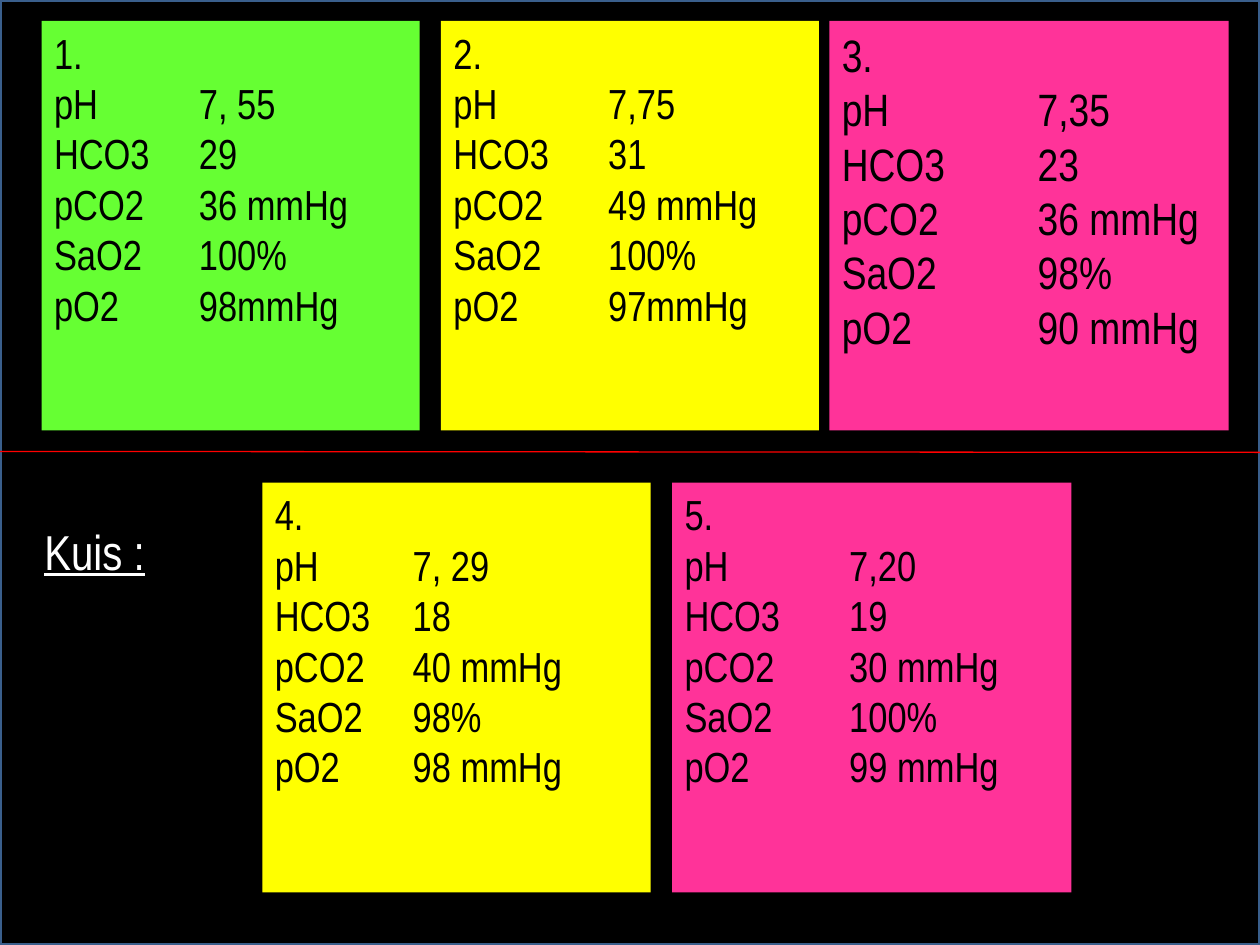
from dataclasses import dataclass

import pptx
import pptx.util
import pptx.dml.color
import pptx.enum.shapes
import pptx.enum.text
import pptx.oxml
import pptx.oxml.ns

Cm = pptx.util.Cm
Pt = pptx.util.Pt
RGBColor = pptx.dml.color.RGBColor

BLACK = RGBColor(0x00, 0x00, 0x00)
WHITE = RGBColor(0xFF, 0xFF, 0xFF)
GREEN = RGBColor(0x66, 0xFF, 0x33)
YELLOW = RGBColor(0xFF, 0xFF, 0x00)
PINK = RGBColor(0xFF, 0x33, 0x99)
RED = RGBColor(0xFF, 0x00, 0x00)
BLUE = RGBColor(0x3A, 0x5F, 0x8C)

WIDTH, HEIGHT = Cm(25.4), Cm(19.05)
TOP, LOWER, TALL = 0.42, 9.73, 8.26
FACE = "Arial Narrow"
LABELS = ("pH", "HCO3", "pCO2", "SaO2", "pO2")


@dataclass
class Card:
    left: float
    top: float
    width: float
    fill: RGBColor
    tab: float
    values: tuple[str, ...]
    size: float = 24


CARDS = (
    Card(0.84, TOP, 7.62, GREEN, 2.92, ("7, 55", "29", "36 mmHg", "100%", "98mmHg")),
    Card(8.89, TOP, 7.62, YELLOW, 3.12, ("7,75", "31", "49 mmHg", "100%", "97mmHg")),
    Card(16.72, TOP, 8.05, PINK, 3.95, ("7,35", "23", "36 mmHg", "98%", "90 mmHg"), 25.9),
    Card(5.29, LOWER, 7.83, YELLOW, 2.78, ("7, 29", "18", "40 mmHg", "98%", "98 mmHg")),
    Card(13.55, LOWER, 8.05, PINK, 3.32, ("7,20", "19", "30 mmHg", "100%", "99 mmHg")),
)


def style(thing: object, form: dict) -> None:
    for name, value in form.items():
        setattr(thing, name, value)


def set_font(font: object, size: float, color: RGBColor, line: bool = False) -> None:
    style(font, {"name": FACE, "size": Pt(size), "underline": line})
    font.color.rgb = color


def add_rect(slide: object, box: tuple, fill: RGBColor) -> object:
    rect = slide.shapes.add_shape(pptx.enum.shapes.MSO_SHAPE.RECTANGLE, *box)
    rect.shadow.inherit = False
    rect.fill.solid()
    rect.fill.fore_color.rgb = fill
    rect.line.fill.background()
    return rect


def set_tab(para: object, pos: float) -> None:
    props = para._p.get_or_add_pPr()
    tabs = pptx.oxml.parse_xml(
        f'<a:tabLst {pptx.oxml.ns.nsdecls("a")}><a:tab pos="{Cm(pos)}" algn="l"/></a:tabLst>'
    )
    props.append(tabs)


def add_card(slide: object, card: Card, count: int) -> None:
    box = (Cm(card.left), Cm(card.top), Cm(card.width), Cm(TALL))
    frame = add_rect(slide, box, card.fill).text_frame
    style(frame, {"word_wrap": True, "vertical_anchor": pptx.enum.text.MSO_ANCHOR.TOP})
    rows = [f"{label}\t{value}" for label, value in zip(LABELS, card.values)]
    frame.text = "\n".join([f"{count}.", *rows])
    for para in frame.paragraphs:
        para.alignment = pptx.enum.text.PP_ALIGN.LEFT
        set_tab(para, card.tab)
        set_font(para.runs[0].font, card.size, BLACK)


def add_rule(slide: object) -> None:
    rule = slide.shapes.add_connector(
        pptx.enum.shapes.MSO_CONNECTOR.STRAIGHT, 0, Cm(9.1), WIDTH, Cm(9.12)
    )
    rule.line.color.rgb = RED
    rule.line.width = Pt(0.75)
    rule._element.spPr.append(
        pptx.oxml.parse_xml(f'<a:effectLst {pptx.oxml.ns.nsdecls("a")}/>')
    )


def set_title(slide: object) -> None:
    title = slide.shapes.title
    style(title, {"left": Cm(0.64), "top": Cm(9.95), "width": Cm(8.68), "height": Cm(2.33)})
    frame = title.text_frame
    frame.text = "Kuis :"
    style(frame, {
        "word_wrap": True,
        "auto_size": pptx.enum.text.MSO_AUTO_SIZE.NONE,
        "vertical_anchor": pptx.enum.text.MSO_ANCHOR.MIDDLE,
    })
    para = frame.paragraphs[0]
    para.alignment = pptx.enum.text.PP_ALIGN.LEFT
    set_font(para.runs[0].font, 28, WHITE, True)
    slide.shapes.element.append(title.element)


def main() -> None:
    deck = pptx.Presentation()
    style(deck, {"slide_width": WIDTH, "slide_height": HEIGHT})
    slide = deck.slides.add_slide(deck.slide_layouts[5])
    back = add_rect(slide, (0, 0, WIDTH, HEIGHT), BLACK)
    back.line.color.rgb = BLUE
    back.line.width = Pt(2)
    for count, card in enumerate(CARDS, 1):
        add_card(slide, card, count)
    add_rule(slide)
    set_title(slide)
    deck.save("out.pptx")


if __name__ == "__main__":
    main()
